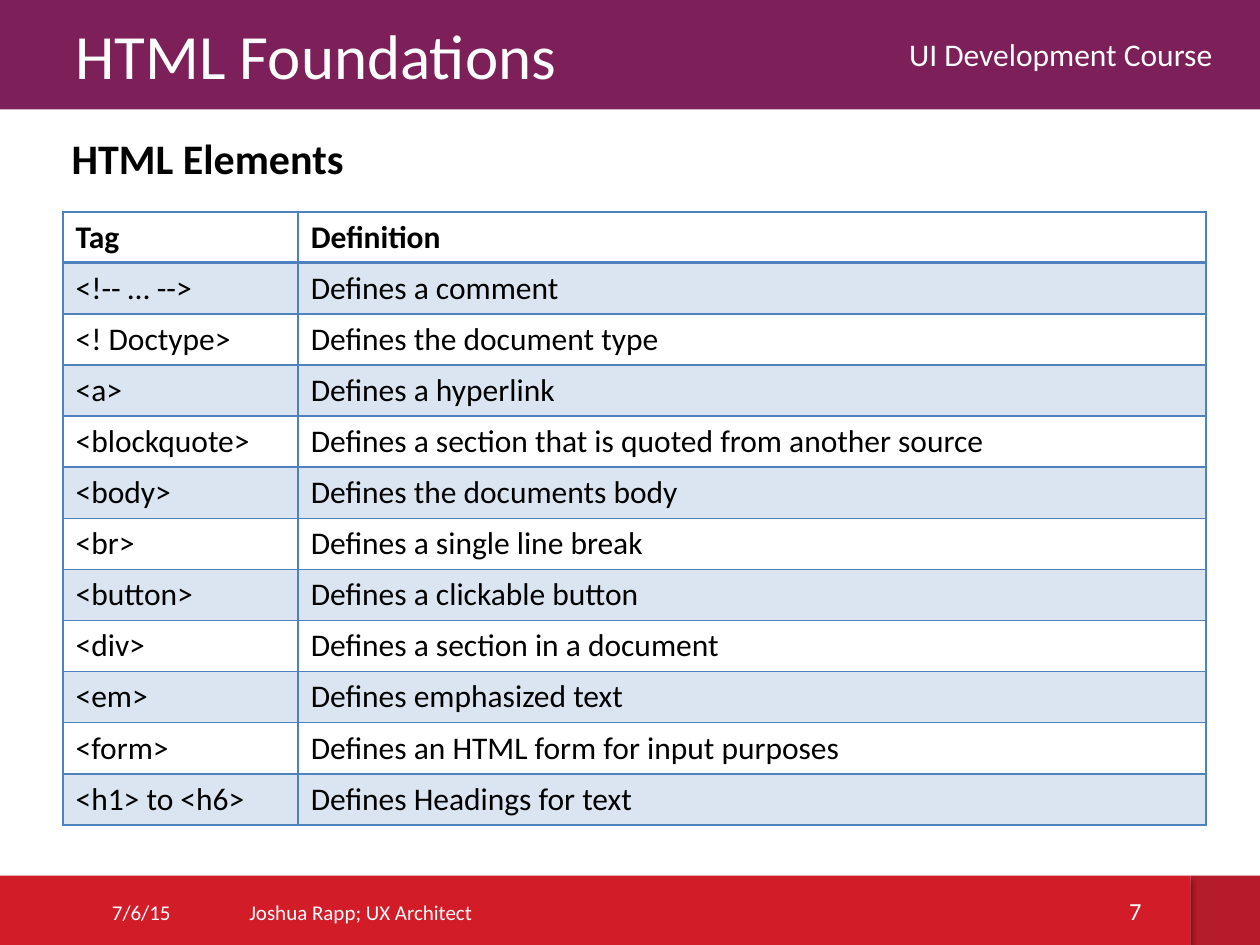
from dataclasses import dataclass

from lxml.etree import SubElement
from pptx import Presentation
from pptx.dml.color import RGBColor
from pptx.enum.shapes import MSO_SHAPE
from pptx.enum.text import MSO_ANCHOR, MSO_AUTO_SIZE, PP_ALIGN
from pptx.oxml.ns import qn
from pptx.util import Pt

FONT = "Calibri"
WHITE, BLACK, BLUE = "FFFFFF", "000000", "4F81BD"
ROW_HEIGHT = 29.22
COLUMN_WIDTHS = (134.4, 518.9)

TAGS = [
    ("Tag", "Definition"),
    ("<!-- … -->", "Defines a comment"),
    ("<! Doctype>", "Defines the document type"),
    ("<a>", "Defines a hyperlink"),
    ("<blockquote>", "Defines a section that is quoted from another source"),
    ("<body>", "Defines the documents body"),
    ("<br>", "Defines a single line break"),
    ("<button>", "Defines a clickable button"),
    ("<div>", "Defines a section in a document"),
    ("<em>", "Defines emphasized text"),
    ("<form>", "Defines an HTML form for input purposes"),
    ("<h1> to <h6>", "Defines Headings for text"),
]


@dataclass
class Band:
    left: float
    top: float
    width: float
    height: float
    color: str
    shadow: bool = False


@dataclass
class Label:
    text: str
    left: float
    top: float
    width: float
    height: float
    size: float
    align: PP_ALIGN = PP_ALIGN.LEFT
    anchor: MSO_ANCHOR = MSO_ANCHOR.MIDDLE


BANDS = [
    Band(680.4, 500.4, 39.6, 39.6, "B51B2A", shadow=True),
    Band(0, 500.4, 680.4, 39.6, "D21D29", shadow=True),
    Band(0, 0, 720, 62.6, "7D2059"),
]
LABELS = [
    Label("HTML Foundations", 36, 10.8, 292.3, 41, 36),
    Label("UI Development Course", 467.3, 16.6, 232.6, 29, 18,
          PP_ALIGN.RIGHT, MSO_ANCHOR.TOP),
    Label("7/6/15", 56.9, 506.9, 59.8, 28.8, 12),
    Label("Joshua Rapp; UX Architect", 135.4, 506.9, 273.6, 28.8, 12),
    Label("7", 627.8, 506.2, 31.7, 28.8, 14, PP_ALIGN.RIGHT),
]


def rgb(color: str) -> RGBColor:
    return RGBColor.from_string(color)


def add_run(paragraph, text: str, size: float, color: str, bold: bool = False) -> None:
    run = paragraph.add_run()
    run.text = text
    run.font.name = FONT
    run.font.size = Pt(size)
    run.font.bold = bold
    run.font.color.rgb = rgb(color)


def add_shadow(shape) -> None:
    effects = shape.element.spPr.find(qn("a:effectLst"))
    shadow = SubElement(effects, qn("a:outerShdw"), blurRad=str(Pt(3.1)),
                        dist=str(Pt(1.8)), dir="5400000", rotWithShape="0")
    color = SubElement(shadow, qn("a:srgbClr"), val=BLACK)
    SubElement(color, qn("a:alpha"), val="35000")


def add_band(slide, band: Band) -> None:
    shape = slide.shapes.add_shape(MSO_SHAPE.RECTANGLE, Pt(band.left), Pt(band.top),
                                   Pt(band.width), Pt(band.height))
    shape.fill.solid()
    shape.fill.fore_color.rgb = rgb(band.color)
    shape.line.fill.background()
    shape.shadow.inherit = False
    if band.shadow:
        add_shadow(shape)


def add_label(slide, label: Label) -> None:
    box = slide.shapes.add_textbox(Pt(label.left), Pt(label.top),
                                   Pt(label.width), Pt(label.height))
    frame = box.text_frame
    frame.word_wrap = True
    frame.vertical_anchor = label.anchor
    paragraph = frame.paragraphs[0]
    paragraph.alignment = label.align
    add_run(paragraph, label.text, label.size, WHITE)


def set_title(slide, text: str) -> None:
    title = slide.shapes.title
    title.left, title.top, title.width, title.height = Pt(33.8), Pt(72), Pt(633.6), Pt(36)
    frame = title.text_frame
    frame.word_wrap = True
    frame.auto_size = MSO_AUTO_SIZE.SHAPE_TO_FIT_TEXT
    frame.vertical_anchor = MSO_ANCHOR.TOP
    paragraph = frame.paragraphs[0]
    paragraph.alignment = PP_ALIGN.LEFT
    add_run(paragraph, text, 24, BLACK, bold=True)


def add_border(cell, side: str, width: float) -> None:
    properties = cell._tc.get_or_add_tcPr()
    line = SubElement(properties, qn(f"a:ln{side}"), w=str(Pt(width)))
    fill = SubElement(line, qn("a:solidFill"))
    SubElement(fill, qn("a:srgbClr"), val=BLUE)


def format_cell(cell, row: int) -> None:
    # The rule under the header belongs to both rows it separates
    widths = {"L": 1, "R": 1, "T": 2 if row == 1 else 1, "B": 2 if row == 0 else 1}
    for side, width in widths.items():
        add_border(cell, side, width)
    if row % 2:
        cell.fill.solid()
        cell.fill.fore_color.rgb = rgb(BLUE)
        color = cell._tc.tcPr.find(qn("a:solidFill")).find(qn("a:srgbClr"))
        SubElement(color, qn("a:alpha"), val="20000")
    else:
        cell.fill.background()


def add_tag_table(slide) -> None:
    frame = slide.shapes.add_table(len(TAGS), len(COLUMN_WIDTHS), Pt(36), Pt(121),
                                   Pt(sum(COLUMN_WIDTHS)), Pt(ROW_HEIGHT * len(TAGS)))
    table = frame.table
    table.horz_banding = False
    for column, width in zip(table.columns, COLUMN_WIDTHS):
        column.width = Pt(width)
    for row, texts in enumerate(TAGS):
        table.rows[row].height = Pt(ROW_HEIGHT)
        for column, text in enumerate(texts):
            cell = table.cell(row, column)
            format_cell(cell, row)
            add_run(cell.text_frame.paragraphs[0], text, 18, BLACK, bold=row == 0)


def main() -> None:
    presentation = Presentation()
    presentation.slide_width, presentation.slide_height = Pt(720), Pt(540)
    slide = presentation.slides.add_slide(presentation.slide_layouts[5])

    # Header and footer
    for band in BANDS:
        add_band(slide, band)
    for label in LABELS:
        add_label(slide, label)

    # Title and table of tags
    set_title(slide, "HTML Elements")
    add_tag_table(slide)

    presentation.save("out.pptx")


if __name__ == "__main__":
    main()
